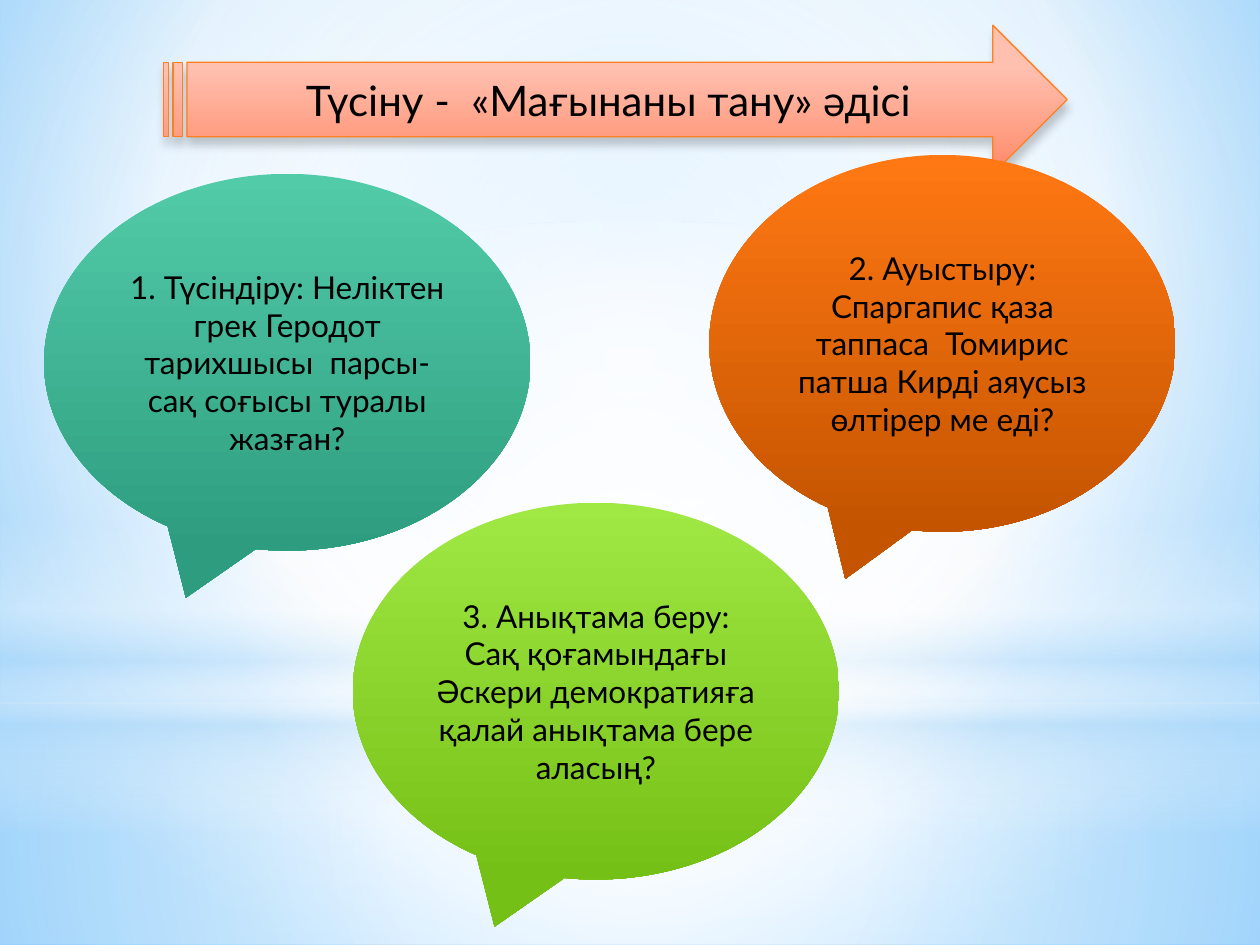
from lxml.etree import SubElement
from pptx import Presentation
from pptx.dml.color import RGBColor
from pptx.enum.shapes import MSO_SHAPE
from pptx.enum.text import MSO_ANCHOR, PP_ALIGN
from pptx.oxml.ns import qn
from pptx.util import Pt

WIDTH, HEIGHT = 720, 540
FONT = "Lato"
BLACK = RGBColor(0x00, 0x00, 0x00)
WHITE = RGBColor(0xFF, 0xFF, 0xFF)
MIST = RGBColor(0xB4, 0xDC, 0xFA)
SKY = RGBColor(0x9E, 0xD5, 0xFF)
AZURE = RGBColor(0x5B, 0xB9, 0xFF)
ORANGE = RGBColor(0xFF, 0x80, 0x21)
PEACH = RGBColor(0xFF, 0xC0, 0xAF)
CORAL = RGBColor(0xFF, 0x89, 0x68)
TEAL = RGBColor(0x52, 0xCB, 0xA9)
DEEP_TEAL = RGBColor(0x2E, 0x9D, 0x7F)
AMBER = RGBColor(0xFF, 0x78, 0x13)
RUST = RGBColor(0xC4, 0x54, 0x00)
LIME = RGBColor(0xA0, 0xE8, 0x44)
GREEN = RGBColor(0x75, 0xC0, 0x16)

CENTRE = (50, 50, 50, 50)
BACKGROUND = [(0, SKY, 100), (60, WHITE, 100), (100, AZURE, 100)]
BACKGROUND_FOCUS = (20, 10, 20, 60)
HORIZON = 401.76

GLOWS = [
    (MSO_SHAPE.RECTANGLE, (0, HORIZON, WIDTH, HEIGHT - HORIZON),
     [(0, WHITE, 91), (37, WHITE, 76), (100, MIST, 79)], CENTRE),
    (MSO_SHAPE.RECTANGLE, (0, 0, WIDTH, HORIZON),
     [(0, WHITE, 89), (48, WHITE, 62), (100, MIST, 79)], CENTRE),
    (MSO_SHAPE.RECTANGLE, (0, 296.64, WIDTH, 180),
     [(0, WHITE, 0), (29, WHITE, 30), (45, MIST, 40),
      (55, WHITE, 26), (65, MIST, 60), (100, WHITE, 0)], None),
    (MSO_SHAPE.OVAL, (0, 126, WIDTH, HORIZON),
     [(0, WHITE, 100), (56, WHITE, 0)], CENTRE),
]

TITLE = "Түсіну -  «Мағынаны тану» әдісі"
TITLE_BOX = (93.6, 14.4, 516.24, 84.96)
TITLE_STOPS = [(28, PEACH, 100), (100, CORAL, 100)]

CALLOUT_HEIGHT = 215.28
CALLOUTS = [
    ("1. Түсіндіру: Неліктен грек Геродот тарихшысы  парсы-сақ соғысы туралы жазған?",
     25.2, 99.36, 277.92, TEAL, DEEP_TEAL),
    ("2. Ауыстыру: Спаргапис қаза таппаса  Томирис патша Кирді аяусыз өлтірер ме еді?",
     405.36, 88.56, 266.4, AMBER, RUST),
    ("3. Анықтама беру: Сақ қоғамындағы Әскери демократияға қалай анықтама бере аласың?",
     201.6, 287.28, 277.92, LIME, GREEN),
]


def add_colour(parent, colour, opacity):
    clr = SubElement(parent, qn("a:srgbClr"), val=str(colour))
    if opacity < 100:
        SubElement(clr, qn("a:alpha"), val=str(opacity * 1000))


def set_gradient(fill, props, stops, focus=None):
    fill.gradient()
    grad = props.find(qn("a:gradFill"))
    for child in list(grad):
        grad.remove(child)
    gs_list = SubElement(grad, qn("a:gsLst"))
    for position, colour, opacity in stops:
        gs = SubElement(gs_list, qn("a:gs"), pos=str(position * 1000))
        add_colour(gs, colour, opacity)
    if focus:
        route = SubElement(grad, qn("a:path"), path="circle")
        edges = {side: str(v * 1000) for side, v in zip("ltrb", focus)}
        SubElement(route, qn("a:fillToRect"), edges)
    else:
        SubElement(grad, qn("a:lin"), ang=str(90 * 60000), scaled="0")


def add_panel(s, kind, box, stops, focus=None):
    sp = s.shapes.add_shape(kind, *map(Pt, box))
    set_gradient(sp.fill, sp.element.spPr, stops, focus)
    sp.line.fill.background()
    sp.shadow.inherit = False
    return sp


def add_text(sp, text, size):
    tf = sp.text_frame
    tf.word_wrap = True
    tf.vertical_anchor = MSO_ANCHOR.MIDDLE
    p = tf.paragraphs[0]
    p.alignment = PP_ALIGN.CENTER
    r = p.add_run()
    r.text = text
    for name, value in {"name": FONT, "size": Pt(size)}.items():
        setattr(r.font, name, value)
    r.font.color.rgb = BLACK


def add_title(s):
    sp = add_panel(s, MSO_SHAPE.STRIPED_RIGHT_ARROW, TITLE_BOX, TITLE_STOPS)
    sp.line.color.rgb = ORANGE
    sp.line.width = Pt(0.75)
    effects = sp.element.spPr.find(qn("a:effectLst"))
    shadow = SubElement(effects, qn("a:outerShdw"), blurRad=str(Pt(5)),
                        dist=str(Pt(4)), dir=str(90 * 60000), rotWithShape="0")
    add_colour(shadow, BLACK, 20)
    add_text(sp, TITLE, 24)


def main():
    prs = Presentation()
    prs.slide_width, prs.slide_height = Pt(WIDTH), Pt(HEIGHT)
    s = prs.slides.add_slide(prs.slide_layouts[6])
    fill = s.background.fill
    set_gradient(fill, s.element.find(".//" + qn("p:bgPr")), BACKGROUND, BACKGROUND_FOCUS)
    for glow in GLOWS:
        add_panel(s, *glow)
    add_title(s)
    for text, left, top, width, light, dark in CALLOUTS:
        sp = add_panel(s, MSO_SHAPE.OVAL_CALLOUT, (left, top, width, CALLOUT_HEIGHT),
                       [(0, light, 100), (100, dark, 100)])
        add_text(sp, text, 18)
    prs.save("out.pptx")


if __name__ == "__main__":
    main()
